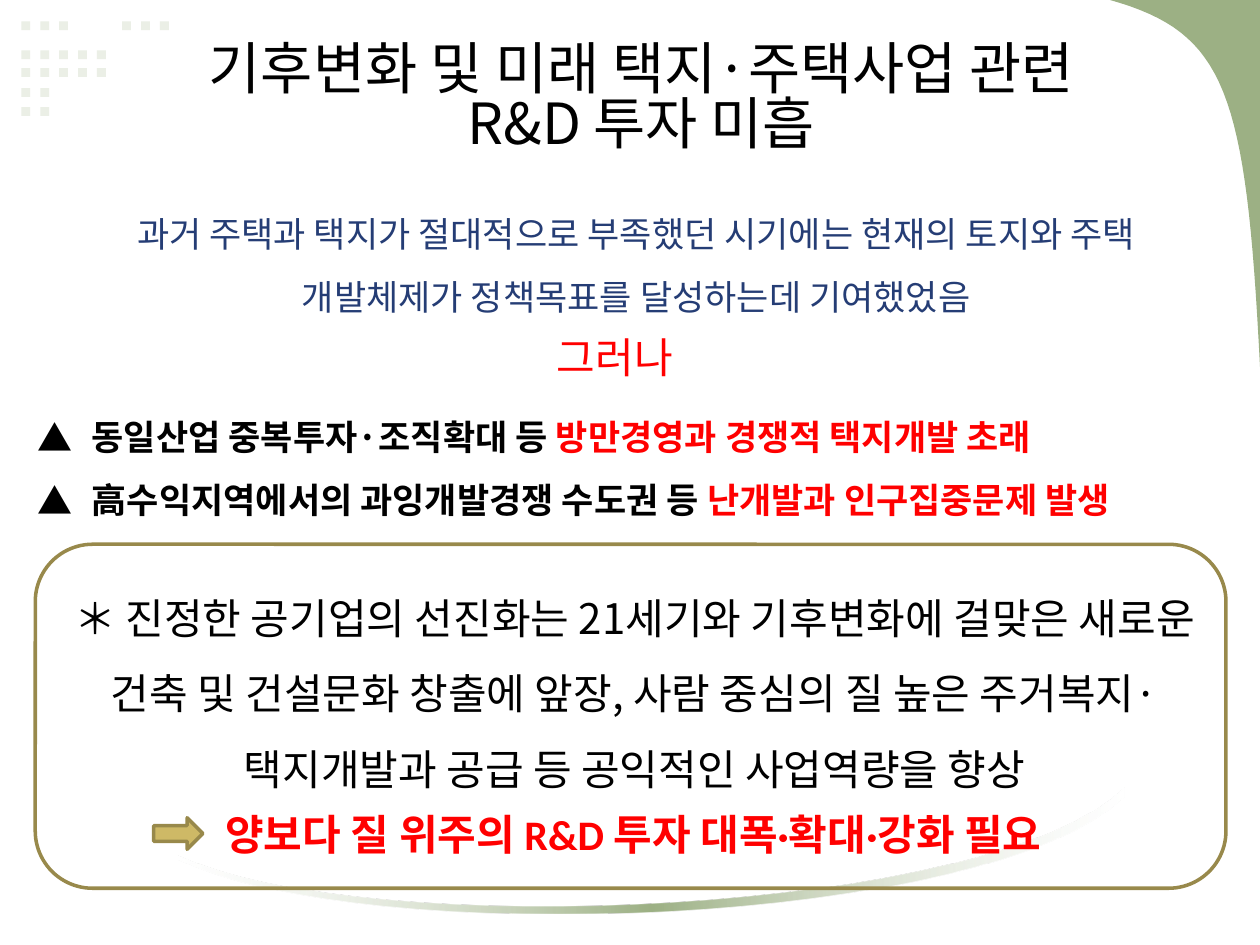
"""Builds the slide on weak R&D investment for climate change and future housing."""
from math import comb

from lxml import etree
from pptx import Presentation
from pptx.dml.color import RGBColor
from pptx.enum.shapes import MSO_SHAPE
from pptx.enum.text import MSO_ANCHOR, MSO_AUTO_SIZE, PP_ALIGN
from pptx.oxml.ns import qn
from pptx.util import Inches, Pt

RECT = MSO_SHAPE.RECTANGLE
ROUND = MSO_SHAPE.ROUNDED_RECTANGLE
ARROW = MSO_SHAPE.RIGHT_ARROW
LEFT, CENTER = PP_ALIGN.LEFT, PP_ALIGN.CENTER
TOP, MIDDLE = MSO_ANCHOR.TOP, MSO_ANCHOR.MIDDLE
FIT, FIXED = MSO_AUTO_SIZE.SHAPE_TO_FIT_TEXT, MSO_AUTO_SIZE.NONE

THEME = {
    "font": "Noto Sans CJK KR", "latin": "Calibri",
    "black": "000000", "red": "FF0000", "navy": "253D75", "white": "FFFFFF",
    "dot": "EBEFE6", "green": "9CB084", "gold": "CEB966", "edge": "98894B",
    "title": 32.4, "large": 24, "body": 20,
}


def write(lines, box, size="body", color="black", font="font", bold=False,
          align=CENTER, space=1.0, anchor=TOP, fit=FIT, bullet=None):
    frame = slide.shapes.add_textbox(*map(Inches, box)).text_frame
    frame.word_wrap = True
    frame.auto_size = fit
    frame.vertical_anchor = anchor
    for i, line in enumerate(lines):
        para = frame.add_paragraph() if i else frame.paragraphs[0]
        para.alignment = align
        para.line_spacing = space
        if bullet:
            props = para._p.get_or_add_pPr()
            props.set("marL", str(Inches(0.43)))
            props.set("indent", str(Inches(-0.43)))
            etree.SubElement(props, qn("a:buFont"), typeface=THEME["font"])
            etree.SubElement(props, qn("a:buChar"), char=bullet)
        for text, tint in [(line, color)] if isinstance(line, str) else line:
            run = para.add_run()
            run.text = text
            run.font.size = Pt(THEME[size])
            run.font.bold = bold
            run.font.name = THEME[font]
            run.font.color.rgb = RGBColor.from_string(THEME[tint])
            run._r.rPr.set("kern", "0")
            etree.SubElement(run._r.rPr, qn("a:ea"), typeface=THEME["font"])


def paint(shape, fill=None, line=None):
    shape.shadow.inherit = False
    if fill:
        shape.fill.solid()
        shape.fill.fore_color.rgb = RGBColor.from_string(THEME[fill])
    else:
        shape.fill.background()
    if line:
        shape.line.color.rgb = RGBColor.from_string(THEME[line])
        shape.line.width = Pt(2)
    else:
        shape.line.fill.background()


deck = Presentation()
deck.slide_width, deck.slide_height = Inches(10), Inches(7.5)
slide = deck.slides.add_slide(deck.slide_layouts[6])
shapes = slide.shapes

dot, pitch = 0.07, 0.15
dot_rows = [(0.17, 0.17, 3), (0.97, 0.17, 3), (0.17, 0.4, 5),
            (0.17, 0.54, 5), (0.17, 0.7, 2), (0.17, 0.85, 2)]
for left, top, count in dot_rows:
    for col in range(count):
        spot = (left + pitch * col, top, dot, dot)
        paint(shapes.add_shape(RECT, *map(Inches, spot)), "dot")

corner = [
    [(8.81, 0), (10, 0)],
    [(10, 0), (10, 2.91)],
    [(10, 2.91), (9.89, 0.72), (9.73, 0.26), (8.81, 0)],
]
swoosh = [
    [(8.92, 6.25), (8.92, 6.32)],
    [(8.92, 6.32), (7.85, 7.37), (2.86, 7.53), (1.42, 6.82)],
    [(1.42, 6.82), (1.42, 6.79)],
    [(1.42, 6.79), (2.9, 7.48), (7.89, 7.27), (8.92, 6.25)],
]
for outline in (corner, swoosh):
    points = []
    for knots in outline:
        grade = len(knots) - 1
        steps = 32 if grade > 1 else 1
        for step in range(steps):
            t = step / steps
            pull = [comb(grade, k) * (1 - t) ** (grade - k) * t ** k
                    for k in range(grade + 1)]
            points.append([Inches(sum(w * v for w, v in zip(pull, axis)))
                           for axis in zip(*knots)])
    pen = shapes.build_freeform(*points[0])
    pen.add_line_segments(points[1:], close=True)
    form = pen.convert_to_shape()
    paint(form, "green")

form.fill.gradient()
form.fill.gradient_angle = 0
stops = form._element.spPr.find(qn("a:gradFill")).find(qn("a:gsLst"))
for stop in list(stops):
    stops.remove(stop)
for pos, tint, alpha in ((0, "white", 30), (50, "green", 100), (100, "white", 30)):
    stop = etree.SubElement(stops, qn("a:gs"), pos=str(pos * 1000))
    shade = etree.SubElement(stop, qn("a:srgbClr"), val=THEME[tint])
    etree.SubElement(shade, qn("a:alpha"), val=str(alpha * 1000))

write(["과거 주택과 택지가 절대적으로 부족했던 시기에는 현재의 토지와 주택 "
       "개발체제가 정책목표를 달성하는데 기여했었음"],
      (0.68, 1.47, 8.74, 1.11), color="navy", space=1.5)
write(["그러나"], (3.74, 2.58, 2.28, 0.5), size="large", color="red")
write([[("동일산업 중복투자·조직확대 등 ", "black"),
        ("방만경영과 경쟁적 택지개발 초래", "red")],
       [("高수익지역에서의 과잉개발경쟁 수도권 등 ", "black"),
        ("난개발과 인구집중문제 발생", "red")]],
      (0.2, 3.08, 9.8, 1.11), bold=True, align=LEFT, space=1.5, bullet="▲")
write(["＊ 진정한 공기업의 선진화는 21세기와 기후변화에 걸맞은 "
       "새로운 건축 및 건설문화 창출에 앞장, 사람 중심의 질 높은 "
       "주거복지·택지개발과 공급 등 공익적인 사업역량을 향상"],
      (0.43, 4.45, 9.21, 1.92), size="large", space=1.5)

panel = shapes.add_shape(ROUND, *map(Inches, (0.28, 4.32, 9.45, 2.73)))
paint(panel, line="edge")
arrow = shapes.add_shape(ARROW, *map(Inches, (1.22, 6.49, 0.39, 0.25)))
paint(arrow, "gold", "edge")

write(["양보다 질 위주의 R&D 투자 대폭·확대·강화 필요"], (1.69, 6.37, 7.32, 0.5),
      size="large", color="red", font="latin", bold=True, align=LEFT)
write(["기후변화 및 미래 택지·주택사업 관련", "R&D 투자 미흡"], (0.59, 0.29, 9, 1.02),
      size="title", space=0.8, anchor=MIDDLE, fit=FIXED)

deck.save("out.pptx")
